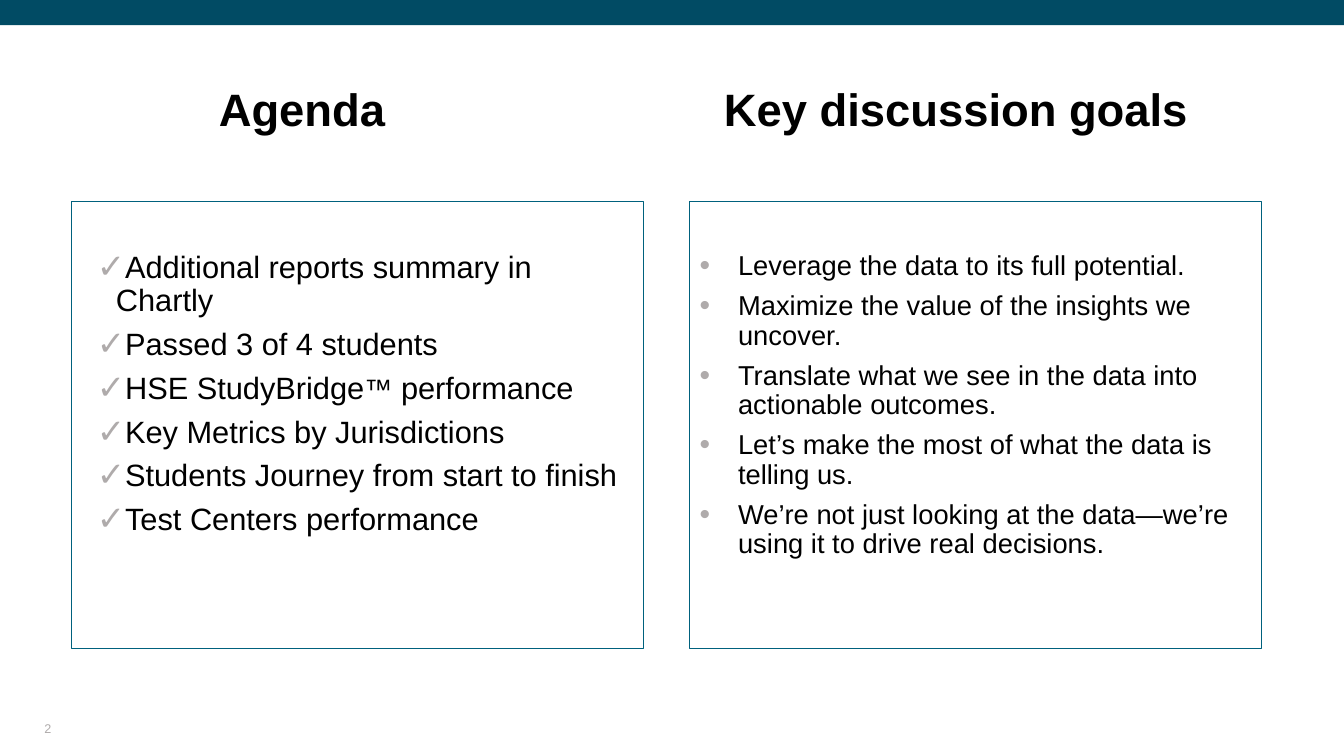
from lxml import etree
from pptx import Presentation
from pptx.dml.color import RGBColor
from pptx.enum import shapes, text
from pptx.oxml import ns
from pptx.util import Inches, Pt

TEAL = RGBColor(0x01, 0x4B, 0x64)
BORDER = RGBColor(0x00, 0x61, 0x7D)
GRAY = RGBColor(0xAF, 0xAB, 0xAB)
BLACK = RGBColor(0, 0, 0)
FONT = "Arial"

AGENDA = [
    [("Additional reports summary in Chartly", 22)],
    [("Passed 3 of 4 students", 22)],
    [("HSE StudyBridge", 22), ("™", 20), ("\u00a0performance", 22)],
    [("Key Metrics by Jurisdictions", 22)],
    [("Students Journey from start to finish", 22)],
    [("Test Centers performance", 22)],
]
GOALS = [[(goal, 19.5)] for goal in (
    "Leverage the data to its full potential.",
    "Maximize the value of the insights we uncover.",
    "Translate what we see in the data into actionable outcomes.",
    "Let’s make the most of what the data is telling us.",
    "We’re not just looking at the data—we’re using it to drive real decisions.",
)]


def set_values(target, values):
    for name, value in values.items():
        setattr(target, name, value)


def place(shape, left, top, width, height):
    set_values(shape, {"left": Inches(left), "top": Inches(top),
                       "width": Inches(width), "height": Inches(height)})


def format_frame(shape, margins=(0, 0, 0, 0), anchor=text.MSO_ANCHOR.TOP):
    frame = shape.text_frame
    sides = ("margin_left", "margin_top", "margin_right", "margin_bottom")
    set_values(frame, dict(zip(sides, map(Inches, margins))))
    set_values(frame, {"word_wrap": True, "vertical_anchor": anchor,
                       "auto_size": text.MSO_AUTO_SIZE.NONE})
    return frame


def add_run(paragraph, words, size, color=BLACK, bold=False):
    run = paragraph.add_run()
    run.text = words
    set_values(run.font, {"name": FONT, "size": Pt(size), "bold": bold})
    run.font.color.rgb = color


def add_child(parent, tag, **attributes):
    return etree.SubElement(parent, ns.qn(tag), attributes)


def add_bullet(paragraph, character, indent):
    properties = paragraph._p.get_or_add_pPr()
    properties.set("marL", str(Inches(indent)))
    properties.set("indent", str(-Inches(indent)))
    add_child(add_child(properties, "a:buClr"), "a:srgbClr", val=str(GRAY))
    add_child(properties, "a:buSzPct", val="110000")
    add_child(properties, "a:buFont", typeface=FONT)
    add_child(properties, "a:buChar", char=character)


def add_top_band(slide):
    band = slide.shapes.add_shape(shapes.MSO_SHAPE.RECTANGLE, 0, 0,
                                  Inches(13.33), Inches(0.25))
    band.shadow.inherit = False
    band.fill.solid()
    band.fill.fore_color.rgb = TEAL
    band.line.fill.background()


def fill_title(title, headings):
    """Write headings, each given with its tab position."""
    place(title, 0.44, 0.87, 12.32, 0.52)
    paragraph = format_frame(title).paragraphs[0]
    set_values(paragraph, {"alignment": text.PP_ALIGN.LEFT,
                           "line_spacing": 0.9, "space_before": Pt(0)})
    tabs = add_child(paragraph._p.get_or_add_pPr(), "a:tabLst")
    for heading, position in headings:
        add_child(tabs, "a:tab", pos=str(Inches(position)), algn="l")
        add_run(paragraph, "\t" + heading, 32.4, bold=True)


def fill_list(body, left, side_margin, character, indent, items):
    place(body, left, 2, 5.67, 4.43)
    body.line.color.rgb = BORDER
    body.line.width = Pt(0.75)
    frame = format_frame(body, (side_margin, 0.5, side_margin, 0.05))
    for index, item in enumerate(items):
        paragraph = frame.add_paragraph() if index else frame.paragraphs[0]
        set_values(paragraph, {"alignment": text.PP_ALIGN.LEFT, "line_spacing": 0.9,
                               "space_before": Pt(7.5 if index else 0)})
        add_bullet(paragraph, character, indent)
        for words, size in item:
            add_run(paragraph, words, size)


def add_page_number(slide, number):
    box = slide.shapes.add_textbox(Inches(0.44), Inches(7.06), Inches(3), Inches(0.24))
    frame = format_frame(box, anchor=text.MSO_ANCHOR.BOTTOM)
    add_run(frame.paragraphs[0], number, 9, GRAY)


def main():
    presentation = Presentation()
    set_values(presentation, {"slide_width": Inches(13.33), "slide_height": Inches(7.5)})
    two_content = presentation.slide_layouts[3]
    slide = presentation.slides.add_slide(two_content)

    # Band and headings
    add_top_band(slide)
    fill_title(slide.shapes.title, [("Agenda", 1.73), ("Key discussion goals", 6.74)])

    # Framed lists
    fill_list(slide.placeholders[1], 0.71, 0.25, "✓", 0.19, AGENDA)
    fill_list(slide.placeholders[2], 6.84, 0.1, "•", 0.38, GOALS)

    # Footer
    add_page_number(slide, "2")
    presentation.save("out.pptx")


if __name__ == "__main__":
    main()
